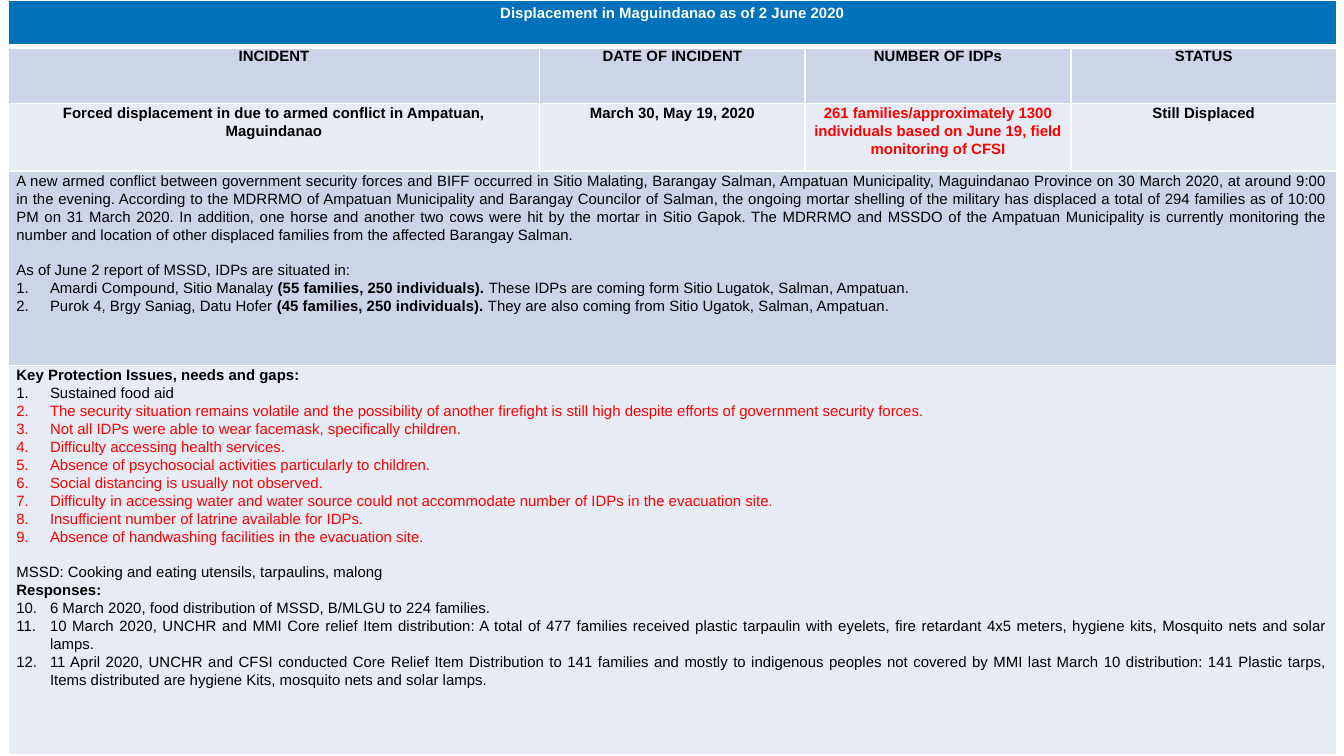
from dataclasses import dataclass
from typing import Optional

from lxml.etree import SubElement
from pptx import Presentation
from pptx.dml.color import RGBColor
from pptx.enum.text import MSO_ANCHOR, PP_ALIGN as Align
from pptx.oxml.ns import qn
from pptx.util import Pt

COLORS = {
    "white": "FFFFFF",
    "black": "000000",
    "red": "FF0000",
    "title": "0072BC",
    "dark band": "CCD5E7",
    "light band": "E7EBF3",
}
FONT = "Arial"
FONT_SIZE = 8
LINE_SPACING = 1.07
BLANK_LINE = 9.6
LIST_INDENT = 18
COLUMN_WIDTHS = [284.6, 142.3, 142.3, 142.3]


@dataclass
class Run:
    text: str
    bold: bool = False
    color: str = "black"


@dataclass
class Paragraph:
    runs: list[Run]
    number_from: Optional[int] = None
    gap_before: float = 0


@dataclass
class Row:
    height: float
    fill: str
    cells: list[list[Paragraph]]
    align: Align = Align.CENTER
    line_spacing: float = LINE_SPACING
    margins: tuple[float, float] = (4.3, 0)
    top_border: float = 1
    bottom_border: float = 1


def line(text: str, bold: bool = False, color: str = "black", gap_before: float = 0) -> Paragraph:
    return Paragraph([Run(text, bold, color)], gap_before=gap_before)


def numbered(items: list[list[Run]], start: int = 1) -> list[Paragraph]:
    return [Paragraph(runs, number_from=start) for runs in items]


def location(place: str, count: str, origin: str) -> list[Run]:
    return [Run(place), Run(count, bold=True), Run(origin)]


SECURITY_AND_NEEDS = [
    "The security situation remains volatile and the possibility of another firefight is still high despite efforts of government security forces.",
    "Not all IDPs were able to wear facemask, specifically children.",
    "Difficulty accessing health services.",
    "Absence of psychosocial activities particularly to children.",
    "Social distancing is usually not observed.",
    "Difficulty in accessing water and water source could not accommodate number of IDPs in the evacuation site.",
    "Insufficient number of latrine available for IDPs.",
    "Absence of handwashing facilities in the evacuation site.",
]
RESPONSES = [
    "6 March 2020, food distribution of MSSD, B/MLGU to 224 families.",
    "10 March 2020, UNCHR and MMI Core relief Item distribution: A total of 477 families received plastic tarpaulin with eyelets, fire retardant 4x5 meters, hygiene kits, Mosquito nets and solar lamps.",
    "11 April 2020, UNCHR and CFSI conducted Core Relief Item Distribution to 141 families and mostly to indigenous peoples not covered by MMI last March 10 distribution: 141 Plastic tarps, Items distributed are hygiene Kits, mosquito nets and solar lamps.",
]
BACKGROUND = [
    line(
        "A new armed conflict between government security forces and BIFF occurred in Sitio Malating, Barangay Salman, "
        "Ampatuan Municipality, Maguindanao Province on 30 March 2020, at around 9:00 in the evening. According to the "
        "MDRRMO of Ampatuan Municipality and Barangay Councilor of Salman, the ongoing mortar shelling of the military "
        "has displaced a total of 294 families as of 10:00 PM on 31 March 2020. In addition, one horse and another two "
        "cows were hit by the mortar in Sitio Gapok. The MDRRMO and MSSDO of the Ampatuan Municipality is currently "
        "monitoring the number and location of other displaced families from the affected Barangay Salman."
    ),
    line("As of June 2 report of MSSD, IDPs are situated in:", gap_before=BLANK_LINE),
    *numbered([
        location("Amardi Compound, Sitio Manalay ", "(55 families, 250 individuals). ",
                 "These IDPs are coming form Sitio Lugatok, Salman, Ampatuan."),
        location("Purok 4, Brgy Saniag, Datu Hofer ", "(45 families, 250 individuals). ",
                 "They are also coming from Sitio Ugatok, Salman, Ampatuan."),
    ]),
]
ISSUES_AND_RESPONSES = [
    line("Key Protection Issues, needs and gaps:", bold=True),
    *numbered([[Run("Sustained food aid")], *([Run(text, color="red")] for text in SECURITY_AND_NEEDS)]),
    line("MSSD: Cooking and eating utensils, tarpaulins, malong", gap_before=BLANK_LINE),
    line("Responses:", bold=True),
    *numbered([[Run(text)] for text in RESPONSES], start=10),
]
HEADINGS = ["INCIDENT", "DATE OF INCIDENT", "NUMBER OF IDPs", "STATUS"]
ROWS = [
    Row(25, "title", [[line("Displacement in Maguindanao as of 2 June 2020", True, "white")]],
        line_spacing=1, margins=(5, 2.7), bottom_border=3),
    Row(30.5, "dark band", [[line(heading, True)] for heading in HEADINGS], top_border=3),
    Row(36.3, "light band", [
        [line("Forced displacement in due to armed conflict in Ampatuan, Maguindanao", True)],
        [line("March 30, May 19, 2020", True)],
        [line("261 families/approximately 1300 individuals based on June 19, field monitoring of CFSI", True, "red")],
        [line("Still Displaced", True)],
    ]),
    Row(104, "dark band", [BACKGROUND], Align.JUSTIFY),
    Row(208.8, "light band", [ISSUES_AND_RESPONSES], Align.JUSTIFY),
]


def rgb(name: str) -> RGBColor:
    return RGBColor.from_string(COLORS[name])


def style_cell(cell, row: Row) -> None:
    properties = cell._tc.get_or_add_tcPr()
    borders = {"lnL": 1, "lnR": 1, "lnT": row.top_border, "lnB": row.bottom_border}
    for side, width in borders.items():
        border = SubElement(properties, qn(f"a:{side}"), w=str(Pt(width)))
        fill = SubElement(border, qn("a:solidFill"))
        SubElement(fill, qn("a:srgbClr"), val=COLORS["white"])
    cell.fill.solid()
    cell.fill.fore_color.rgb = rgb(row.fill)
    horizontal, vertical = row.margins
    cell.margin_left = cell.margin_right = Pt(horizontal)
    cell.margin_top = cell.margin_bottom = Pt(vertical)
    cell.vertical_anchor = MSO_ANCHOR.TOP


def write_paragraph(paragraph, content: Paragraph, row: Row) -> None:
    paragraph.alignment = row.align
    paragraph.line_spacing = row.line_spacing
    if content.gap_before:
        paragraph.space_before = Pt(content.gap_before)
    if content.number_from:
        properties = paragraph._p.get_or_add_pPr()
        properties.set("marL", str(Pt(LIST_INDENT)))
        properties.set("indent", str(-Pt(LIST_INDENT)))
        SubElement(properties, qn("a:buFont"), typeface=FONT)
        SubElement(properties, qn("a:buAutoNum"), type="arabicPeriod", startAt=str(content.number_from))
    for part in content.runs:
        run = paragraph.add_run()
        run.text = part.text
        run.font.name = FONT
        run.font.size = Pt(FONT_SIZE)
        run.font.bold = part.bold
        run.font.color.rgb = rgb(part.color)


def write_cell(cell, paragraphs: list[Paragraph], row: Row) -> None:
    frame = cell.text_frame
    for index, content in enumerate(paragraphs):
        paragraph = frame.add_paragraph() if index else frame.paragraphs[0]
        write_paragraph(paragraph, content, row)


def add_report_table(slide) -> None:
    width, height = sum(COLUMN_WIDTHS), sum(row.height for row in ROWS)
    table = slide.shapes.add_table(
        len(ROWS), len(COLUMN_WIDTHS), Pt(4.5), Pt(0), Pt(width), Pt(height)
    ).table
    table.first_row = table.horz_banding = False
    for column, column_width in zip(table.columns, COLUMN_WIDTHS):
        column.width = Pt(column_width)
    last_column = len(COLUMN_WIDTHS) - 1
    for index, row in enumerate(ROWS):
        table.rows[index].height = Pt(row.height)
        for cell in table.rows[index].cells:
            style_cell(cell, row)
        if len(row.cells) == 1:
            table.cell(index, 0).merge(table.cell(index, last_column))
        for column_index, paragraphs in enumerate(row.cells):
            write_cell(table.cell(index, column_index), paragraphs, row)


def main() -> None:
    presentation = Presentation()
    presentation.slide_width, presentation.slide_height = Pt(720), Pt(405)
    blank_layout = presentation.slide_layouts[6]
    add_report_table(presentation.slides.add_slide(blank_layout))
    presentation.save("out.pptx")


if __name__ == "__main__":
    main()
